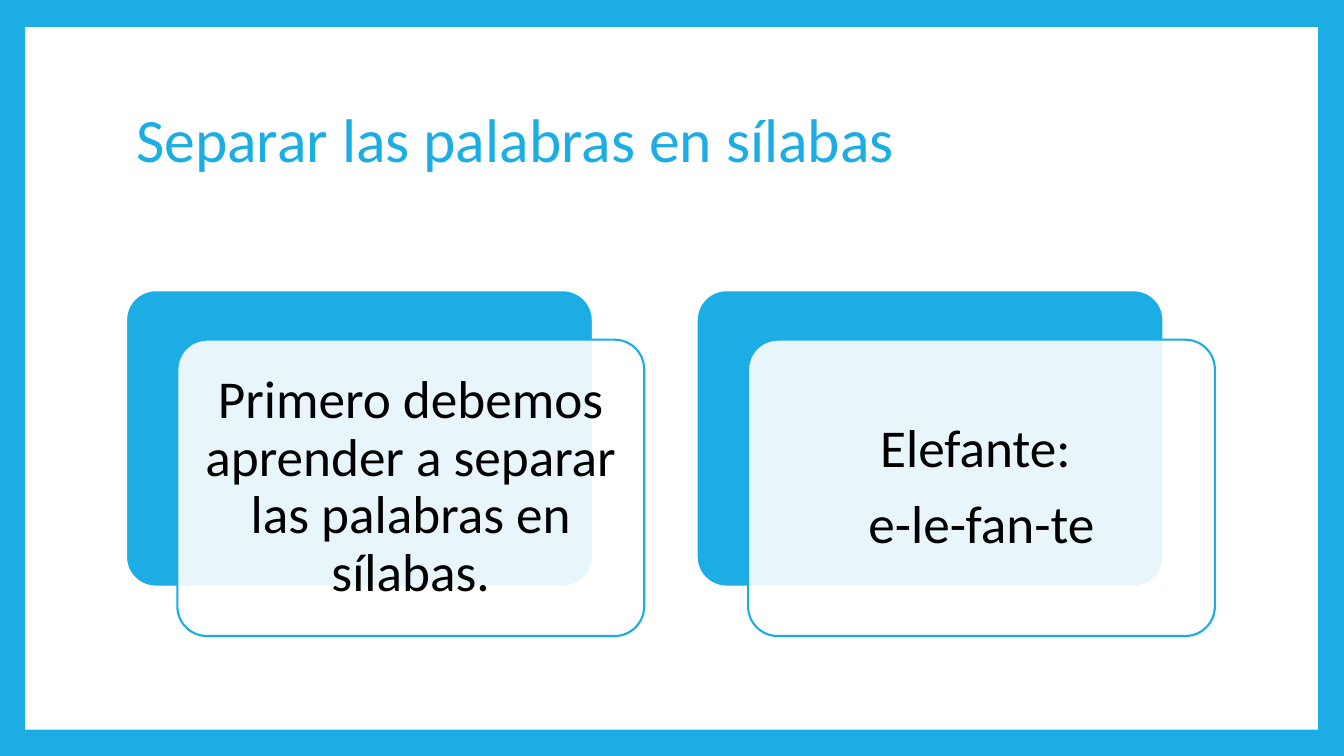
from lxml import etree
from pptx import Presentation
from pptx.dml.color import RGBColor
from pptx.enum.shapes import MSO_SHAPE
from pptx.enum.text import MSO_ANCHOR, PP_ALIGN
from pptx.oxml.ns import qn
from pptx.util import Inches, Pt

RECTANGLE = MSO_SHAPE.RECTANGLE
ROUNDED = MSO_SHAPE.ROUNDED_RECTANGLE
MIDDLE = MSO_ANCHOR.MIDDLE
LEFT, CENTER = PP_ALIGN.LEFT, PP_ALIGN.CENTER

BLUE, WHITE, BLACK = "1CADE4", "FFFFFF", "000000"
FONT = "Calibri"
CARD_W, CARD_H = 4.63, 2.94
CARD_SHIFT_X, CARD_SHIFT_Y = 0.51, 0.49
CARDS_LEFT, CARDS_TOP, CARD_PITCH = 1.25, 2.88, 5.66
CARD_TEXTS = [
    ["Primero debemos aprender a separar las palabras en sílabas."],
    ["Elefante: ", "e-le-fan-te"],
]


def color(hex_string):
    return RGBColor.from_string(hex_string)


def add_panel(slide, kind, x, y, w, h, fill, line=None):
    panel = slide.shapes.add_shape(kind, Inches(x), Inches(y), Inches(w), Inches(h))
    panel.shadow.inherit = False
    panel.fill.solid()
    panel.fill.fore_color.rgb = color(fill)
    if line:
        panel.line.color.rgb = color(line)
        panel.line.width = Pt(1.5)
    else:
        panel.line.fill.background()
    if kind == ROUNDED:
        panel.adjustments[0] = 0.1
    return panel


def set_opacity(panel, percent):
    fill_color = panel.fill._xPr.find(qn("a:solidFill"))[0]
    etree.SubElement(fill_color, qn("a:alpha"), val=str(percent * 1000))


def style_paragraph(paragraph, size, text_color, alignment):
    paragraph.alignment = alignment
    paragraph.line_spacing = 0.9
    paragraph.font.name = FONT
    paragraph.font.size = Pt(size)
    paragraph.font.color.rgb = color(text_color)


def add_frame(slide):
    slide.background.fill.solid()
    slide.background.fill.fore_color.rgb = color(BLUE)
    page = add_panel(slide, RECTANGLE, 0.25, 0.27, 12.82, 6.97, WHITE)
    # Keep the page behind the title
    slide.shapes._spTree.insert(2, page._element)


def add_title(slide, x, y, w, h):
    title = slide.shapes.title
    title.left, title.top = Inches(x), Inches(y)
    title.width, title.height = Inches(w), Inches(h)
    title.text_frame.text = "Separar las palabras en sílabas"
    title.text_frame.vertical_anchor = MIDDLE
    style_paragraph(title.text_frame.paragraphs[0], 44, BLUE, LEFT)


def add_card(slide, x, y, lines):
    # Blue backing
    add_panel(slide, ROUNDED, x, y, CARD_W, CARD_H, BLUE, WHITE)

    # Translucent front with the text
    front = add_panel(slide, ROUNDED, x + CARD_SHIFT_X, y + CARD_SHIFT_Y,
                      CARD_W, CARD_H, WHITE, BLUE)
    set_opacity(front, 90)
    frame = front.text_frame
    frame.word_wrap = True
    frame.vertical_anchor = MIDDLE
    frame.margin_left = frame.margin_right = Inches(0.16)
    frame.margin_top = frame.margin_bottom = Inches(0.16)
    frame.text = "\n".join(lines)
    for paragraph in frame.paragraphs:
        style_paragraph(paragraph, 38, BLACK, CENTER)
        paragraph.space_after = Pt(13.3)


def main():
    prs = Presentation()
    prs.slide_width, prs.slide_height = Inches(13.33), Inches(7.5)
    slide = prs.slides.add_slide(prs.slide_layouts[5])
    add_frame(slide)
    add_title(slide, 1.25, 0.67, 10.8, 1.48)
    for i, lines in enumerate(CARD_TEXTS):
        add_card(slide, CARDS_LEFT + i * CARD_PITCH, CARDS_TOP, lines)
    prs.save("out.pptx")


if __name__ == "__main__":
    main()
